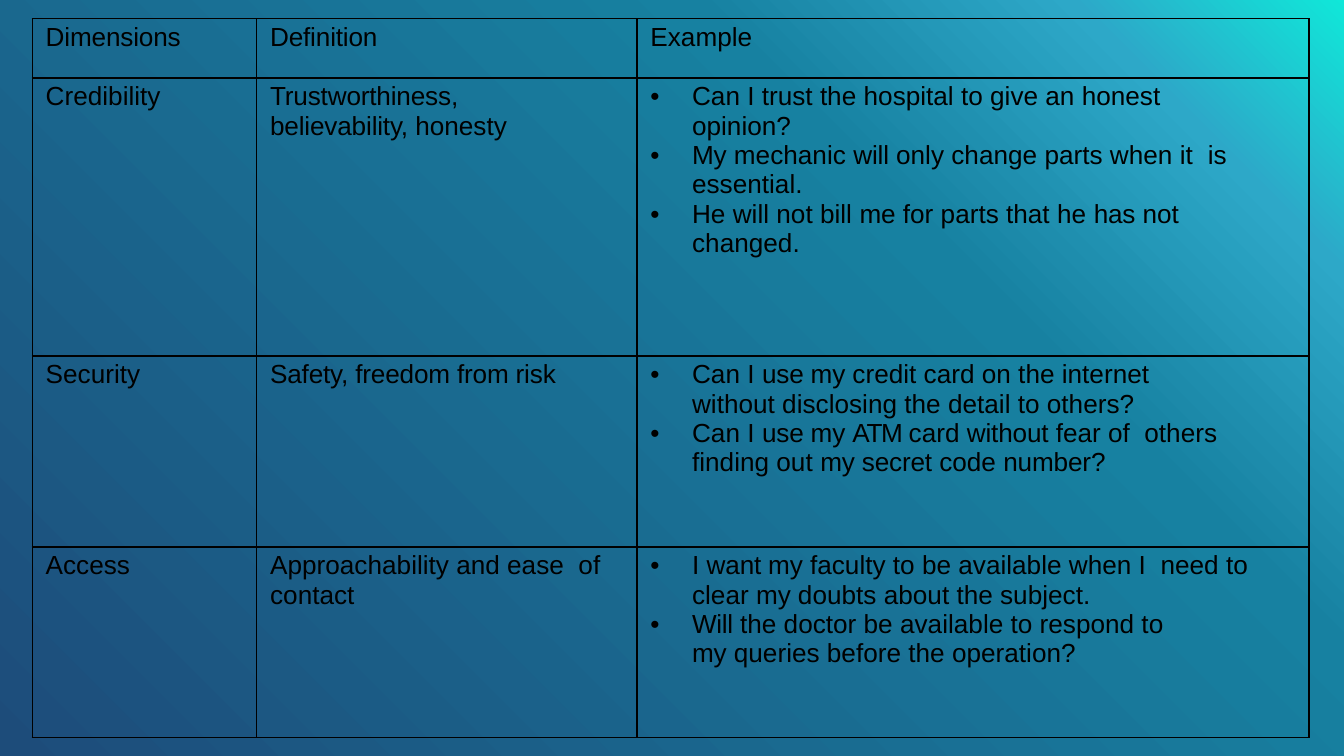
from lxml import etree
from pptx import Presentation
from pptx.dml.color import RGBColor
from pptx.oxml.ns import qn
from pptx.util import Inches, Pt

COLORS = {"ink": "000000", "aqua": "10E7D9", "sky": "2DA8C8",
          "teal": "1781A1", "navy": "1D4C7A"}
STOPS = [(0, "aqua"), (13, "sky"), (31, "teal"), (100, "navy")]
COLS = [1.67, 2.83, 5]
ROWS = [0.44, 2.07, 1.42, 1.42]
TIGHT = -10
LEFT, BULLET, PLAIN = (0.1, 0), (0.41, -0.31), (0.41, 0)


def add(parent, tag, **attrs):
    return etree.SubElement(parent, qn(tag), {k: str(v) for k, v in attrs.items()})


def fill_paragraph(p, runs, indent, right):
    pPr = p._p.get_or_add_pPr()
    pPr.set("marL", str(Inches(indent[0])))
    pPr.set("indent", str(Inches(indent[1])))
    pPr.set("marR", str(Inches(right)))
    p.space_before = Pt(0)
    if indent == BULLET:
        add(add(pPr, "a:buClr"), "a:srgbClr", val=COLORS["ink"])
        add(pPr, "a:buFont", typeface="Arial")
        add(pPr, "a:buChar", char="•")
        add(add(pPr, "a:tabLst"), "a:tab", pos=Inches(indent[0]), algn="l")
    for text, spacing in runs:
        r = p.add_run()
        r.text = text
        r.font.name, r.font.size = "Arial", Pt(14)
        r.font.color.rgb = RGBColor.from_string(COLORS["ink"])
        r._r.get_or_add_rPr().set("spc", str(spacing))


TABLE = [
    [[(LEFT, 0, [("Dimensions", TIGHT)])],
     [(LEFT, 0, [("Definition", TIGHT)])],
     [(LEFT, 0, [("Example", 0)])]],
    [[(LEFT, 0, [("Credibility", 0)])],
     [(LEFT, 0.4, [("Trustworthiness, believability, ", TIGHT), ("honesty", 0)])],
     [(BULLET, 0.45, [("Can I trust the hospital to give an honest opinion?", 0)]),
      (BULLET, 0.3, [("My ", TIGHT), ("mechanic ", 0), ("will ", TIGHT),
                     ("only change parts when it  ", 0), ("is ", TIGHT),
                     ("essential.", 0)]),
      (BULLET, 0.3, [("He will ", 0), ("not bill ", 0), ("me ", TIGHT),
                     ("for parts that he ", 0), ("has ", TIGHT),
                     ("not changed.", 0)])]],
    [[(LEFT, 0, [("Security", 0)])],
     [(LEFT, 0, [("Safety, freedom from risk", TIGHT)])],
     [(BULLET, 0.55, [("Can I ", 0), ("use my ", TIGHT),
                      ("credit card on the internet without disclosing "
                       "the detail to others?", 0)]),
      (BULLET, 0.3, [("Can I ", 0), ("use my ", TIGHT), ("ATM ", -80),
                     ("card ", 0), ("without ", TIGHT),
                     ("fear of  others finding out ", 0), ("my secret ", TIGHT),
                     ("code ", 0), ("number?", TIGHT)])]],
    [[(LEFT, 0, [("Access", 0)])],
     [(LEFT, 0, [("Approachability and ease  of contact", 0)])],
     [(BULLET, 0.3, [("I ", 0), ("want my ", TIGHT),
                     ("faculty to be available when I  need to clear ", 0),
                     ("my ", TIGHT), ("doubts about the subject.", 0)]),
      (BULLET, 0.3, [("Will ", -20), ("the doctor be available to respond to", 0)]),
      (PLAIN, 0.3, [("my ", TIGHT), ("queries before the operation?", 0)])]],
]

prs = Presentation()
prs.slide_width = Inches(10)
prs.slide_height = prs.slide_width * 9 // 16
s = prs.slides.add_slide(prs.slide_layouts[6])

fill = s.background.fill
fill.gradient()
fill.gradient_angle = 225
stops = s._element.find(".//" + qn("a:gsLst"))
for stop in list(stops):
    stops.remove(stop)
for pos, name in STOPS:
    add(add(stops, "a:gs", pos=pos * 1000), "a:srgbClr", val=COLORS[name])

table = s.shapes.add_table(len(ROWS), len(COLS), Inches(0.24), Inches(0.14),
                           Inches(sum(COLS)), Inches(sum(ROWS))).table
table.first_row = table.horz_banding = False
for column, width in zip(table.columns, COLS):
    column.width = Inches(width)
for row, height in zip(table.rows, ROWS):
    row.height = Inches(height)

for i, row in enumerate(TABLE):
    for j, paragraphs in enumerate(row):
        cell = table.cell(i, j)
        cell.margin_left = cell.margin_right = cell.margin_bottom = 0
        cell.margin_top = Inches(0.03)
        tcPr = cell._tc.get_or_add_tcPr()
        for side in ("a:lnL", "a:lnR", "a:lnT", "a:lnB"):
            ln = add(tcPr, side, w=Pt(0.75))
            add(add(ln, "a:solidFill"), "a:srgbClr", val=COLORS["ink"])
        cell.fill.background()
        tf = cell.text_frame
        for n, (indent, right, runs) in enumerate(paragraphs):
            p = tf.add_paragraph() if n else tf.paragraphs[0]
            fill_paragraph(p, runs, indent, right)

prs.save("out.pptx")
